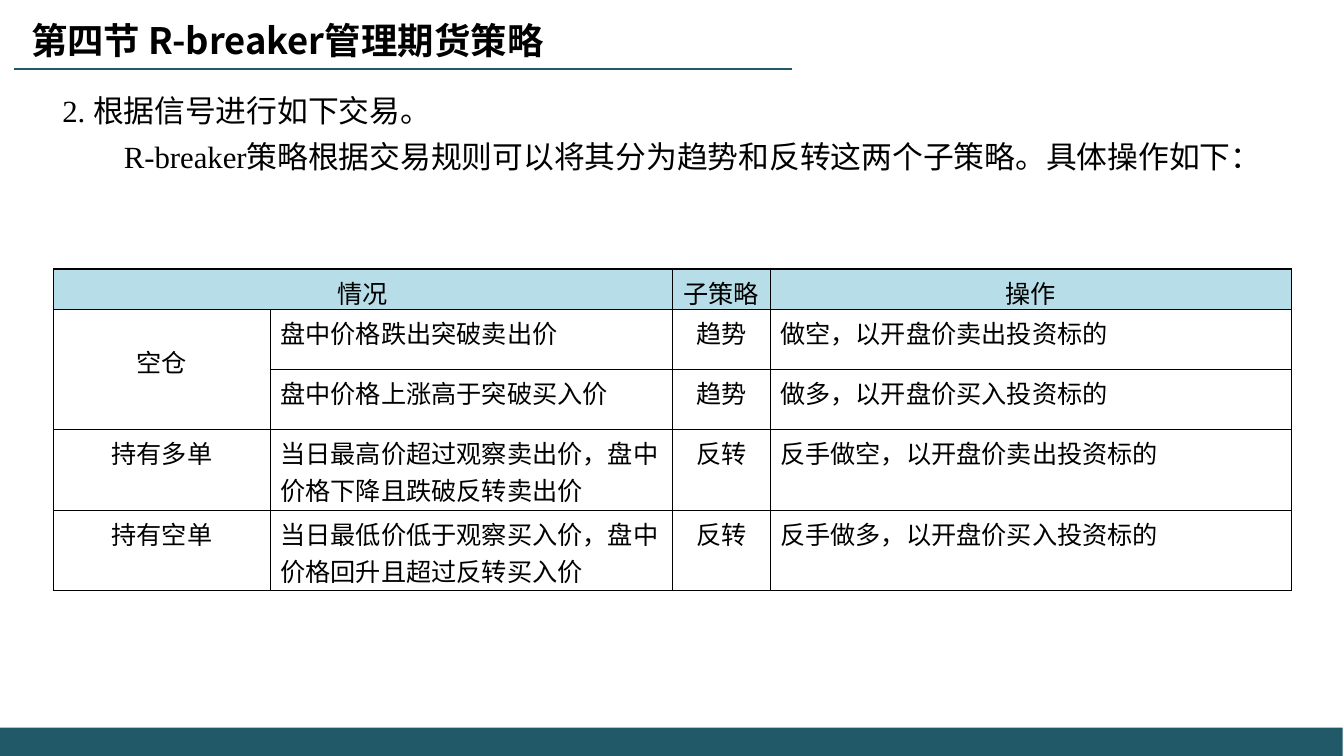
from lxml import etree
from pptx import Presentation
from pptx.dml.color import RGBColor
from pptx.enum.shapes import MSO_CONNECTOR, MSO_SHAPE
from pptx.enum.text import MSO_ANCHOR, PP_ALIGN
from pptx.oxml.ns import qn
from pptx.util import Pt

RECTANGLE = MSO_SHAPE.RECTANGLE
STRAIGHT = MSO_CONNECTOR.STRAIGHT
TOP, MIDDLE = MSO_ANCHOR.TOP, MSO_ANCHOR.MIDDLE
LEFT, CENTER = PP_ALIGN.LEFT, PP_ALIGN.CENTER

COLORS = {"teal": "215968", "header": "B7DEE8", "ink": "000000"}
SANS, SERIF, ARIAL = "Noto Sans CJK SC", "Times New Roman", "Arial"
CELL_SIZE = 18

HEADER = ["情况", "", "子策略", "操作"]
RULES = [
    ["空仓", "盘中价格跌出突破卖出价", "趋势", "做空，以开盘价卖出投资标的"],
    ["", "盘中价格上涨高于突破买入价", "趋势", "做多，以开盘价买入投资标的"],
    ["持有多单", "当日最高价超过观察卖出价，盘中价格下降且跌破反转卖出价", "反转",
     "反手做空，以开盘价卖出投资标的"],
    ["持有空单", "当日最低价低于观察买入价，盘中价格回升且超过反转买入价", "反转",
     "反手做多，以开盘价买入投资标的"],
]
COLUMN_WIDTHS = [154.8, 287.3, 69.8, 372.2]
ROW_HEIGHTS = [28.8, 43, 43, 57.6, 57]


def color(name):
    return RGBColor.from_string(COLORS[name])


class StrategySlide:
    def __init__(self, presentation):
        self.slide = presentation.slides.add_slide(presentation.slide_layouts[6])
        self.shapes = self.slide.shapes

    def style(self, paragraph, size, font, bold=False):
        for run in paragraph.runs:
            run.font.size, run.font.name, run.font.bold = Pt(size), font, bold
            run.font.color.rgb = color("ink")
            east_asian = etree.SubElement(run.font._element, qn("a:ea"))
            east_asian.set("typeface", SANS)

    def bar(self, left, top, width, height):
        bar = self.shapes.add_shape(RECTANGLE, Pt(left), Pt(top), Pt(width), Pt(height))
        bar.shadow.inherit = False
        bar.fill.solid()
        bar.fill.fore_color.rgb = color("teal")
        bar.line.fill.background()

    def rule(self, left, right, y):
        rule = self.shapes.add_connector(STRAIGHT, Pt(left), Pt(y), Pt(right), Pt(y))
        rule.line.color.rgb = color("teal")
        rule.line.width = Pt(1.5)
        etree.SubElement(rule._element.spPr, qn("a:effectLst"))

    def text(self, box, lines, size, font, bold=False, anchor=TOP, spacing=1.0, indents=(0,)):
        frame = self.shapes.add_textbox(*map(Pt, box)).text_frame
        frame.word_wrap = True
        frame.vertical_anchor = anchor
        frame.text = "\n".join(lines)
        for paragraph, indent in zip(frame.paragraphs, indents):
            paragraph.line_spacing = spacing
            paragraph._p.get_or_add_pPr().set("indent", str(Pt(indent)))
            self.style(paragraph, size, font, bold)

    def border(self, cell):
        properties = cell._tc.get_or_add_tcPr()
        for position, side in enumerate(("lnL", "lnR", "lnT", "lnB")):
            line = etree.Element(qn(f"a:{side}"), w=str(Pt(1)))
            fill = etree.SubElement(line, qn("a:solidFill"))
            etree.SubElement(fill, qn("a:srgbClr"), val=COLORS["ink"])
            properties.insert(position, line)

    def table(self, left, top, rows, widths, heights):
        table = self.shapes.add_table(len(rows), len(widths), Pt(left), Pt(top),
                                      Pt(sum(widths)), Pt(sum(heights))).table
        for column, width in zip(table.columns, widths):
            column.width = Pt(width)
        for row, height in zip(table.rows, heights):
            row.height = Pt(height)
        for r, row in enumerate(rows):
            for c, wording in enumerate(row):
                cell = table.cell(r, c)
                cell.margin_top, cell.margin_bottom = Pt(3.6), 0
                if r == 0:
                    cell.fill.solid()
                    cell.fill.fore_color.rgb = color("header")
                else:
                    cell.fill.background()
                self.border(cell)
                cell.text_frame.text = wording
                paragraph = cell.text_frame.paragraphs[0]
                paragraph.alignment = CENTER if r == 0 or c in (0, 2) else LEFT
                paragraph.font.size = Pt(CELL_SIZE)
                self.style(paragraph, CELL_SIZE, SERIF if r else ARIAL)
        return table


def main():
    presentation = Presentation()
    presentation.slide_width, presentation.slide_height = Pt(960), Pt(540)
    page = StrategySlide(presentation)

    # Footer bar and title rule
    page.bar(0, 519.8, 959, 20.2)
    page.rule(10, 566, 49)

    # Introduction and title
    page.text((37.4, 55.4, 884.2, 87.1),
              ["2. 根据信号进行如下交易。",
               "R-breaker策略根据交易规则可以将其分为趋势和反转这两个子策略。具体操作如下："],
              22, SERIF, spacing=1.25, indents=(0, 44))
    page.text((15.1, 9.4, 727.2, 38.9), ["第四节 R-breaker管理期货策略"],
              26, SANS, bold=True, anchor=MIDDLE)

    # Trading rules
    rules = page.table(38.2, 192.2, [HEADER] + RULES, COLUMN_WIDTHS, ROW_HEIGHTS)
    rules.cell(0, 0).merge(rules.cell(0, 1))
    rules.cell(1, 0).merge(rules.cell(2, 0))
    rules.cell(1, 0).margin_top = Pt(24.3)

    presentation.save("out.pptx")


if __name__ == "__main__":
    main()
